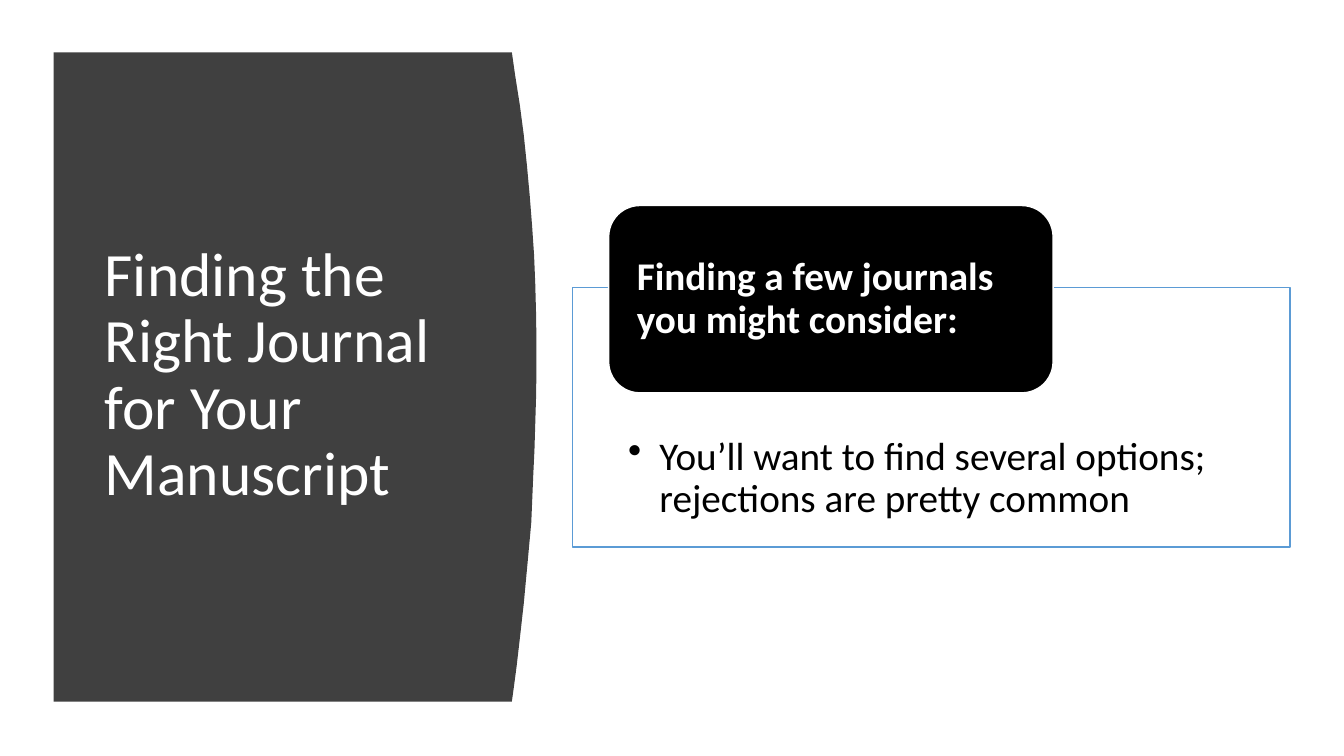
from lxml import etree
from pptx import Presentation
from pptx.dml.color import RGBColor
from pptx.enum.shapes import MSO_SHAPE
from pptx.enum.text import MSO_ANCHOR as ANCHOR, PP_ALIGN as ALIGN
from pptx.oxml.ns import qn
from pptx.util import Cm, Pt


def paint(color_format, color):
    color_format.rgb = RGBColor.from_string(color)


def write(shape, text, size, color, margins, anchor, bullet=None, bold=False):
    frame = shape.text_frame
    frame.word_wrap = True
    frame.vertical_anchor = anchor
    (frame.margin_left, frame.margin_top,
     frame.margin_right, frame.margin_bottom) = [Cm(m) for m in margins]
    paragraph = frame.paragraphs[0]
    paragraph.text = text
    paragraph.alignment = ALIGN.LEFT
    paragraph.line_spacing = 0.9
    if bullet:
        properties = paragraph._p.get_or_add_pPr()
        properties.set("marL", str(Cm(0.79)))
        properties.set("indent", str(Cm(-0.79)))
        etree.SubElement(properties, qn("a:buChar"), char=bullet)
    paragraph.font.name = "Calibri"
    paragraph.font.size = Pt(size)
    paragraph.font.bold = bold
    paint(paragraph.font.color, color)


prs = Presentation()
prs.slide_width, prs.slide_height = Cm(33.87), Cm(19.05)
slide = prs.slides.add_slide(prs.slide_layouts[6])
shapes = slide.shapes

# Dark panel with a bowed right edge
panel_left, panel_top, panel_bottom = 1.35, 1.32, 17.68
bowed_edge = [
    (12.9, panel_top), (12.98, 1.88), (13.1, 2.64), (13.2, 3.4), (13.28, 4.17),
    (13.35, 4.93), (13.41, 5.69), (13.46, 6.43), (13.49, 7.16), (13.51, 7.9),
    (13.52, 8.61), (13.52, 9.32), (13.51, 10.01), (13.49, 10.67), (13.47, 11.33),
    (13.44, 11.96), (13.39, 13.16), (13.29, 14.25), (13.2, 15.21), (13.1, 16.1),
    (13.02, 16.79), (12.95, 17.32), (12.9, panel_bottom),
]
outline = shapes.build_freeform(Cm(panel_left), Cm(panel_top))
outline.add_line_segments(
    [(Cm(x), Cm(y)) for x, y in bowed_edge + [(panel_left, panel_bottom)]])
panel = outline.convert_to_shape()
panel.shadow.inherit = False
panel.fill.solid()
paint(panel.fill.fore_color, "404040")
panel.line.fill.background()

# Slide title
title = shapes.add_textbox(Cm(2.39), Cm(2.82), Cm(9.5), Cm(13.31))
write(title, "Finding the Right Journal for Your Manuscript", 44, "FFFFFF",
      (0.25, 0.13, 0.25, 0.13), ANCHOR.MIDDLE)

# Advice frame and the heading that overlaps its top edge
advice = shapes.add_shape(MSO_SHAPE.RECTANGLE, Cm(14.43), Cm(7.24), Cm(18.08), Cm(6.55))
heading = shapes.add_shape(
    MSO_SHAPE.ROUNDED_RECTANGLE, Cm(15.34), Cm(5.18), Cm(11.2), Cm(4.72))
for box, fill, line in [(advice, "FFFFFF", "5B9BD5"), (heading, "000000", "FFFFFF")]:
    box.shadow.inherit = False
    box.fill.solid()
    paint(box.fill.fore_color, fill)
    paint(box.line.color, line)
    box.line.width = Pt(1)
advice_fill = advice.fill._xPr.find(qn("a:solidFill"))[0]
etree.SubElement(advice_fill, qn("a:alpha"), val="90000")

write(advice, "You’ll want to find several options; rejections are pretty common",
      28, "000000", (1.4, 3.76, 1.4, 0.56), ANCHOR.TOP, bullet="•")
write(heading, "Finding a few journals you might consider:",
      28, "FFFFFF", (0.48, 0, 0.48, 0), ANCHOR.MIDDLE, bold=True)

prs.save("out.pptx")
